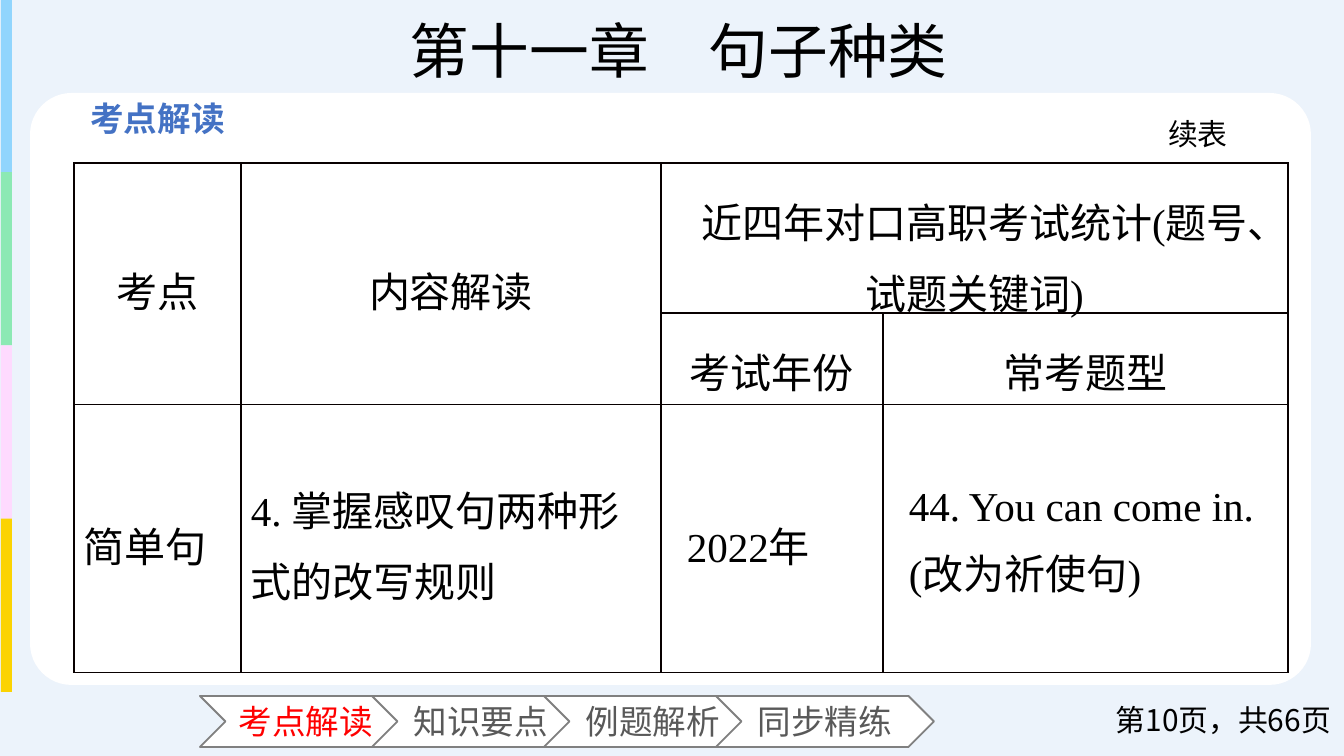
import dataclasses

import lxml.etree
import pptx
import pptx.dml.color
import pptx.enum.shapes
import pptx.enum.text
import pptx.oxml.ns
import pptx.util

PX = 914400 / 134.4
ALIGN = pptx.enum.text.PP_ALIGN
MIDDLE = pptx.enum.text.MSO_ANCHOR.MIDDLE
SHAPE = pptx.enum.shapes.MSO_SHAPE
qn = pptx.oxml.ns.qn


@dataclasses.dataclass(frozen=True)
class Theme:
    sans: str = "Noto Sans CJK SC"
    serif: str = "Times New Roman"
    backdrop: str = "ECF3FB"
    card: str = "FFFFFF"
    stripes: tuple = ("91D5FD", "8CE9B4", "FEDAFE", "FBD302")
    text: str = "000000"
    section: str = "4472C4"
    active: str = "FF0000"
    muted: str = "595959"
    outline: str = "808080"
    border: str = "080000"
    title_size: int = 32
    table_size: int = 22
    label_size: int = 18
    note_size: int = 16


THEME = Theme()


def px(value):
    return pptx.util.Emu(round(value * PX))


def rgb(value):
    return pptx.dml.color.RGBColor.from_string(value)


def write(frame, text, font, size, color, align=ALIGN.LEFT, bold=False):
    frame.word_wrap = True
    para = frame.paragraphs[0]
    para.text = text
    para.alignment = align
    para.font.name = font
    para.font.size = pptx.util.Pt(size)
    para.font.bold = bold
    para.font.color.rgb = rgb(color)
    latin = para.font._element.find(qn("a:latin"))
    east = lxml.etree.Element(qn("a:ea"), typeface=THEME.sans)
    latin.addnext(east)
    return para


def add_shape(page, kind, box, fill, line=None):
    shape = page.shapes.add_shape(kind, *map(px, box))
    shape.shadow.inherit = False
    shape.fill.solid()
    shape.fill.fore_color.rgb = rgb(fill)
    if line:
        shape.line.color.rgb = rgb(line)
        shape.line.width = pptx.util.Pt(1)
    else:
        shape.line.fill.background()
    return shape


def add_label(page, box, text, size, color, align=ALIGN.LEFT, bold=False):
    label = page.shapes.add_textbox(*map(px, box))
    write(label.text_frame, text, THEME.sans, size, color, align, bold)
    return label


def add_title(page, box, text):
    title = page.shapes.title
    title.left, title.top, title.width, title.height = map(px, box)
    title.text_frame.vertical_anchor = MIDDLE
    title.text_frame.auto_size = pptx.enum.text.MSO_AUTO_SIZE.NONE
    write(title.text_frame, text, THEME.serif, THEME.title_size, THEME.text, ALIGN.CENTER)


def add_stripes(page, box):
    left, top, width, height = box
    step = height / len(THEME.stripes)
    for index, color in enumerate(THEME.stripes):
        add_shape(page, SHAPE.RECTANGLE, (left, top + index * step, width, step), color)


def add_card(page, box):
    left, top, width, height = box
    card = add_shape(page, SHAPE.ROUNDED_RECTANGLE, box, THEME.card)
    card.adjustments[0] = 0.07
    add_label(page, (left + 47, top - 2, 195, 46), "考点解读",
              THEME.label_size, THEME.section, bold=True)
    add_label(page, (left + 1125, top + 16, 103, 36), "续表", THEME.note_size, THEME.text)


def add_navigation(page, box, names, active):
    left, top, width, height = box
    step = 172
    chevron_width = width - step * (len(names) - 1)
    for index, name in enumerate(names):
        chevron = add_shape(page, SHAPE.CHEVRON,
                            (left + index * step, top, chevron_width, height),
                            THEME.card, THEME.outline)
        chevron.text_frame.vertical_anchor = MIDDLE
        chosen = name == active
        write(chevron.text_frame, name, THEME.sans, THEME.label_size,
              THEME.active if chosen else THEME.muted,
              ALIGN.JUSTIFY if chosen else ALIGN.CENTER)


def add_borders(cell):
    properties = cell._tc.get_or_add_tcPr()
    for index, side in enumerate(("lnL", "lnR", "lnT", "lnB")):
        line = lxml.etree.Element(qn(f"a:{side}"), w="12700")
        fill = lxml.etree.SubElement(line, qn("a:solidFill"))
        lxml.etree.SubElement(fill, qn("a:srgbClr"), val=THEME.border)
        properties.insert(index, line)


def add_exam_table(page, box, columns, rows, texts):
    table = page.shapes.add_table(len(rows), len(columns), *map(px, box)).table
    table.first_row = table.horz_banding = False
    for column, width in zip(table.columns, columns):
        column.width = px(width)
    for row, height in zip(table.rows, rows):
        row.height = px(height)
    table.cell(0, 0).merge(table.cell(1, 0))
    table.cell(0, 1).merge(table.cell(1, 1))
    table.cell(0, 2).merge(table.cell(0, 3))
    for row, line in enumerate(texts):
        for column, text in enumerate(line):
            cell = table.cell(row, column)
            cell.fill.background()
            add_borders(cell)
            if not text:
                continue
            header = row < 2
            tight = not header and column < 2
            cell.vertical_anchor = MIDDLE
            cell.margin_left = cell.margin_right = px(10 if tight else 26)
            cell.margin_top = cell.margin_bottom = px(0 if tight else 16)
            para = write(cell.text_frame, text, THEME.serif, THEME.table_size, THEME.text,
                         ALIGN.CENTER if header else ALIGN.LEFT)
            para.line_spacing = 1.2


def main():
    deck = pptx.Presentation()
    deck.slide_width, deck.slide_height = px(1344), px(756)
    page = deck.slides.add_slide(deck.slide_layouts[5])
    page.background.fill.solid()
    page.background.fill.fore_color.rgb = rgb(THEME.backdrop)

    add_stripes(page, (1, -1, 11, 693))
    add_card(page, (30, 93, 1281, 592))
    add_title(page, (237, 7, 884, 86), "第十一章\u3000句子种类".replace("\u3000", "　"))
    add_navigation(page, (200, 696, 734, 51),
                   ("考点解读", "知识要点", "例题解析", "同步精练"), "考点解读")
    number = add_label(page, (1071, 700, 273, 40), "第10页，共66页",
                       THEME.note_size, THEME.text, ALIGN.RIGHT)
    number.text_frame.vertical_anchor = MIDDLE
    add_exam_table(page, (74, 163, 1214, 509), (167, 420, 222, 405), (150, 91, 268), (
        ("考点", "内容解读", "近四年对口高职考试统计(题号、试题关键词)", ""),
        ("", "", "考试年份", "常考题型"),
        ("简单句", "4. 掌握感叹句两种形式的改写规则", "2022年",
         "44. You can come in. (改为祈使句)"),
    ))
    deck.save("out.pptx")


if __name__ == "__main__":
    main()
